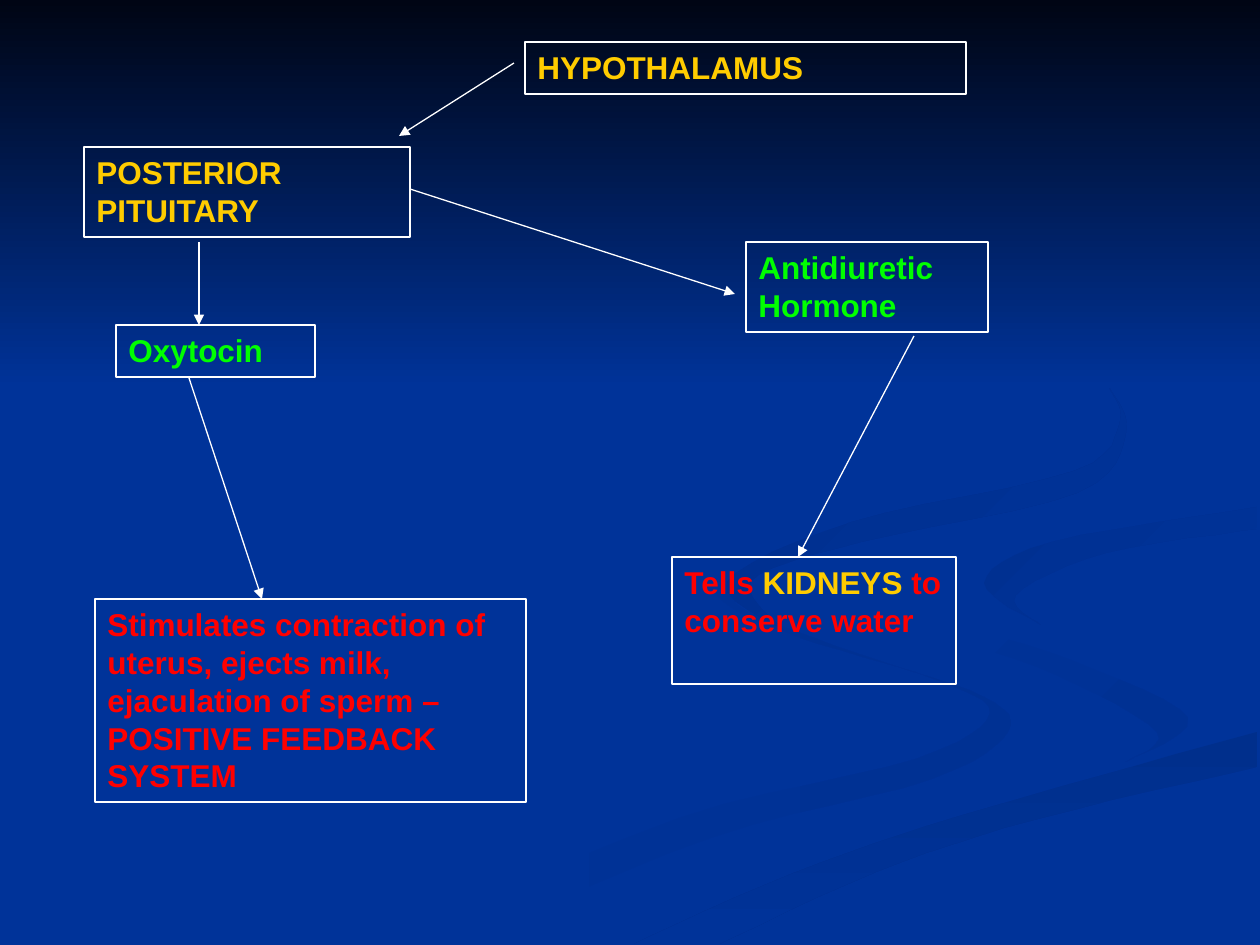
from lxml import etree
from pptx import Presentation
from pptx.dml.color import RGBColor
from pptx.enum.shapes import MSO_CONNECTOR, MSO_SHAPE
from pptx.oxml.ns import qn
from pptx.util import Emu, Pt

LINE = MSO_CONNECTOR.STRAIGHT
RECT = MSO_SHAPE.RECTANGLE
PX = 914400 / 126
WIDE, HIGH = 1260, 945
STEPS = 6

BLUE = RGBColor(0x00, 0x33, 0x99)
NIGHT = RGBColor(0x00, 0x05, 0x14)
DUSK = RGBColor(0x00, 0x31, 0x93)
DEEP = RGBColor(0x00, 0x2F, 0x8C)
DIM = RGBColor(0x00, 0x30, 0x91)
SHADE = RGBColor(0x00, 0x2F, 0x8E)
WHITE = RGBColor(0xFF, 0xFF, 0xFF)
GOLD = RGBColor(0xFF, 0xCC, 0x00)
GREEN = RGBColor(0x00, 0xFF, 0x00)
RED = RGBColor(0xFF, 0x00, 0x00)

BOXES = [
    ((84, 147, 326, 90), [("POSTERIOR PITUITARY", GOLD)]),
    ((746, 242, 242, 90), [("Antidiuretic Hormone", GREEN)]),
    ((672, 557, 284, 127), [("Tells ", RED), ("KIDNEYS ", GOLD),
                            ("to conserve water", RED)]),
    ((525, 42, 441, 52), [("HYPOTHALAMUS", GOLD)]),
    ((116, 325, 199, 52), [("Oxytocin", GREEN)]),
    ((95, 599, 431, 203), [("Stimulates contraction of uterus, ejects milk, "
                            "ejaculation of sperm – POSITIVE FEEDBACK SYSTEM", RED)]),
]

ARROWS = [
    (410, 189, 735, 294),
    (914, 336, 798, 557),
    (514, 63, 399, 136),
    (199, 242, 199, 325),
    (189, 378, 262, 599),
]

RIBBONS = [
    (BLUE, DUSK, 0,
     [(725, 578), (745, 610), (859, 654), (984, 697), (1008, 732), (932, 779),
      (711, 838), (455, 944)],
     [(725, 578), (721, 600), (795, 636), (934, 679), (990, 713), (916, 759),
      (679, 818), (378, 944)]),
    (BLUE, DUSK, 45,
     [(912, 585), (939, 617), (1071, 660), (1188, 718), (1126, 762)],
     [(912, 585), (940, 630), (1056, 675), (1157, 732), (1126, 762)]),
    (DEEP, BLUE, 90,
     [(634, 944), (794, 873), (963, 815), (1257, 732)],
     [(719, 944), (876, 872), (1034, 820), (1257, 767)]),
    (DIM, BLUE, 45,
     [(1257, 507), (1052, 542), (984, 583), (1041, 625)],
     [(1257, 529), (1106, 553), (1016, 595), (1041, 625)]),
    (SHADE, BLUE, 45,
     [(1109, 387), (1126, 433), (1077, 493), (861, 542), (751, 581), (784, 630)],
     [(1109, 387), (1120, 422), (1074, 471), (852, 522), (727, 582), (784, 630)]),
]


def emu(*nums):
    return [Emu(round(n * PX)) for n in nums]


def blend(a, b, c, d, t):
    return (2 * b + (c - a) * t + (2 * a - 5 * b + 4 * c - d) * t ** 2
            + (3 * b - a - 3 * c + d) * t ** 3) / 2


def curve(knots):
    ends = [knots[0], *knots, knots[-1]]
    points = [
        tuple(blend(*axis, step / STEPS) for axis in zip(*ends[i:i + 4]))
        for i in range(len(knots) - 1)
        for step in range(STEPS)
    ]
    return points + [knots[-1]]


def paint(shape, start, end, turn):
    shape.shadow.inherit = False
    shape.line.fill.background()
    shape.fill.gradient()
    shape.fill.gradient_angle = (360 - turn) % 360
    for stop, tint, spot in zip(shape.fill.gradient_stops, (start, end), (0, 1)):
        stop.color.rgb = tint
        stop.position = spot


def stroke(item):
    item.line.color.rgb = WHITE
    item.line.width = Pt(0.75)


def write(para, text, size=18, font="Arial", bold=True, color=WHITE):
    run = para.add_run()
    run.text = text
    run.font.size = Pt(size)
    run.font.name = font
    run.font.bold = bold
    run.font.color.rgb = color


def arrow(shapes, ends):
    link = shapes.add_connector(LINE, *emu(*ends))
    stroke(link)
    props = link._element.spPr
    tip = etree.SubElement(props.find(qn("a:ln")), qn("a:tailEnd"))
    tip.set("type", "triangle")
    etree.SubElement(props, qn("a:effectLst"))


def main():
    deck = Presentation()
    deck.slide_width, deck.slide_height = emu(WIDE, HIGH)
    slide = deck.slides.add_slide(deck.slide_layouts[6])
    slide.background.fill.solid()
    slide.background.fill.fore_color.rgb = BLUE
    shapes = slide.shapes

    for start, end, turn, near, far in RIBBONS:
        points = curve(near) + curve(far)[::-1]
        pen = shapes.build_freeform(*points[0], scale=PX)
        pen.add_line_segments(points[1:], close=True)
        paint(pen.convert_to_shape(), start, end, turn)
    paint(shapes.add_shape(RECT, *emu(0, 0, WIDE, 388)), NIGHT, BLUE, 90)

    for place, parts in BOXES:
        box = shapes.add_textbox(*emu(*place))
        stroke(box)
        box.text_frame.word_wrap = True
        for text, color in parts:
            write(box.text_frame.paragraphs[0], text, color=color)
    for ends in ARROWS:
        arrow(shapes, ends)

    deck.save("out.pptx")


if __name__ == "__main__":
    main()
